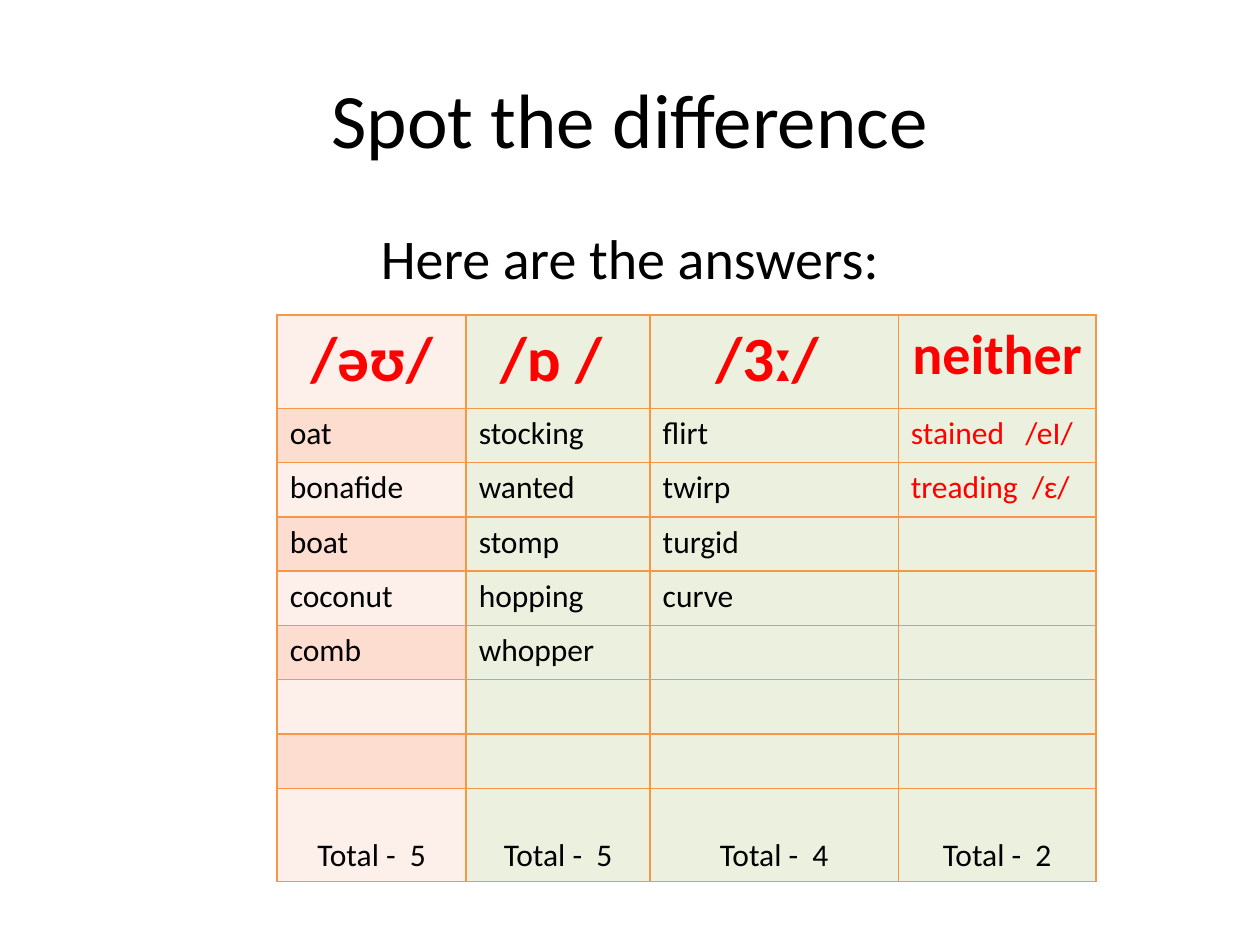
from lxml.etree import SubElement
from pptx import Presentation
from pptx.dml.color import RGBColor
from pptx.enum.text import MSO_ANCHOR as Anchor, PP_ALIGN as Align
from pptx.oxml.ns import qn
from pptx.util import Inches, Pt

BLACK = RGBColor(0, 0, 0)
RED = RGBColor(0xFF, 0, 0)
ORANGE = RGBColor(0xF7, 0x96, 0x46)
PEACH = RGBColor(0xFC, 0xDD, 0xCF)
PALE_PEACH = RGBColor(0xFD, 0xEF, 0xE9)
PALE_GREEN = RGBColor(0xEB, 0xF1, 0xDE)
FONT = "Calibri"

COL_SHARES = (1.5, 1.46, 1.97, 1.57)
HEADER_ROW, WORD_ROW = 0.74, 0.43
WORD_ROWS = 7
SOUNDS = {
    "/əʊ/": ["oat", "bonafide", "boat", "coconut", "comb"],
    "/ɒ / ": ["stocking", "wanted", "stomp", "hopping", "whopper"],
    "/3ː/ ": ["flirt", "twirp", "turgid", "curve"],
    "neither": ["stained   /eI/", "treading  /ɛ/"],
}


def write(tf, text, size, color=BLACK, bold=False, align=Align.CENTER):
    tf.text = text
    p = tf.paragraphs[0]
    p.alignment = align
    for r in p.runs:
        r.font.name = FONT
        r.font.size = Pt(size)
        r.font.bold = bold
        r.font.color.rgb = color


def add_text(s, box, text, size, anchor):
    tf = s.shapes.add_textbox(*box).text_frame
    tf.word_wrap = True
    tf.vertical_anchor = anchor
    write(tf, text, size)


def set_borders(cell):
    tc_pr = cell._tc.get_or_add_tcPr()
    for i, side in enumerate(("a:lnL", "a:lnR", "a:lnT", "a:lnB")):
        ln = tc_pr.makeelement(qn(side), {"w": str(Pt(1))})
        fill = SubElement(ln, qn("a:solidFill"))
        SubElement(fill, qn("a:srgbClr"), val=str(ORANGE))
        tc_pr.insert(i, ln)


def fill_cell(cell, row, col):
    cell.fill.solid()
    peach = PEACH if row % 2 else PALE_PEACH
    cell.fill.fore_color.rgb = PALE_GREEN if col else peach
    set_borders(cell)


def add_answers(s, box):
    left, top, width, height = box
    rows = [HEADER_ROW] + [WORD_ROW] * WORD_ROWS + [HEADER_ROW]
    table = s.shapes.add_table(len(rows), len(COL_SHARES), *box).table
    table.first_row = table.horz_banding = False
    for col, share in zip(table.columns, COL_SHARES):
        col.width = int(width * share / sum(COL_SHARES))
    for row, share in zip(table.rows, rows):
        row.height = int(height * share / sum(rows))

    for c, (sound, words) in enumerate(SOUNDS.items()):
        neither = sound == "neither"
        for r in range(len(rows)):
            fill_cell(table.cell(r, c), r, c)
        write(table.cell(0, c).text_frame, sound, 32 if neither else 36, RED, True)
        for r in range(1, WORD_ROWS + 1):
            word = words[r - 1] if r <= len(words) else ""
            write(table.cell(r, c).text_frame, word, 18,
                  RED if neither else BLACK, align=Align.LEFT)
        total = table.cell(len(rows) - 1, c)
        total.vertical_anchor = Anchor.BOTTOM
        write(total.text_frame, f"Total -  {len(words)}", 18)


def main():
    prs = Presentation()
    prs.slide_width, prs.slide_height = Inches(10), Inches(7.5)
    s = prs.slides.add_slide(prs.slide_layouts[6])

    def area(left, top, width, height):
        w, h = prs.slide_width, prs.slide_height
        return int(left * w), int(top * h), int(width * w), int(height * h)

    add_text(s, area(0.05, 0.04, 0.9, 0.17), "Spot the difference", 44, Anchor.MIDDLE)
    add_text(s, area(0.05, 0.23, 0.9, 0.66), "Here are the answers:", 32, Anchor.TOP)
    add_answers(s, area(0.22, 1 / 3, 0.65, 0.6))
    prs.save("out.pptx")


if __name__ == "__main__":
    main()
